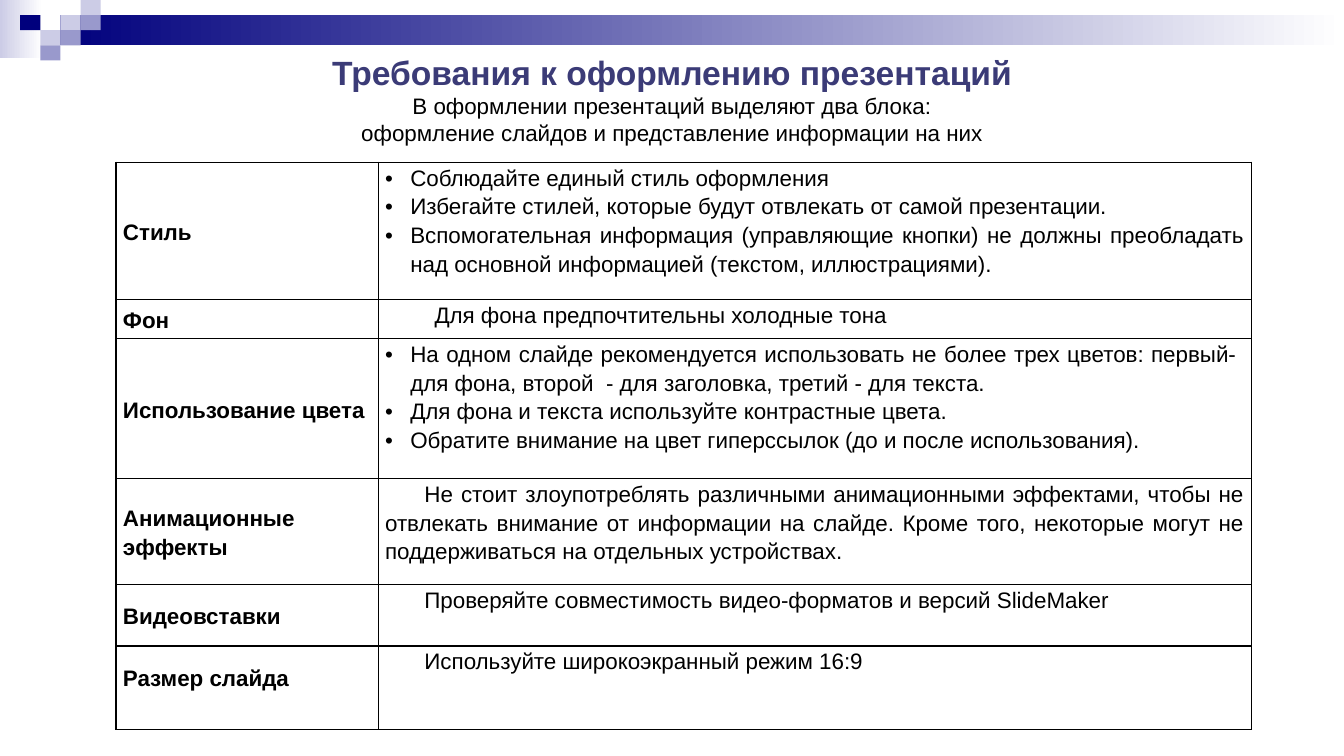
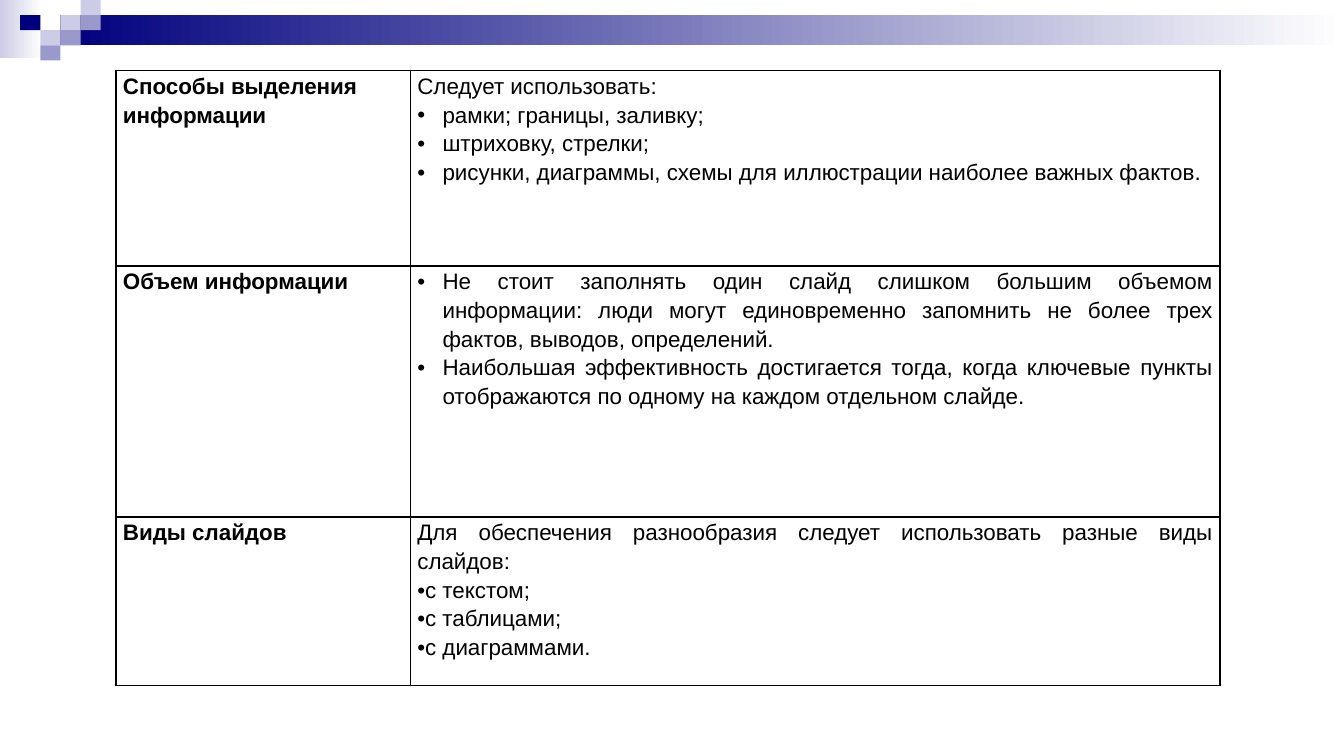
from lxml.etree import SubElement
from pptx import Presentation
from pptx.dml.color import RGBColor
from pptx.enum.shapes import MSO_SHAPE as Shape
from pptx.enum.text import MSO_ANCHOR as Anchor, MSO_AUTO_SIZE as AutoSize, PP_ALIGN as Align
from pptx.oxml.ns import qn
from pptx.util import Emu, Pt

COLORS = {
    "text": "000000",
    "title": "3B3B77",
    "navy": "00007D",
    "violet": "9999CC",
    "pale": "CCCCE6",
    "white": "FFFFFF",
}
FONT = "Arial"
TITLE_ONLY, BLANK = 5, 6
TABLE_LEFT = 115
TILE_WIDTH, TILE_HEIGHT = 20, 15
TILES = [
    (3, 1, "pale"), (4, 0, "pale"), (4, 1, "violet"), (2, 2, "pale"),
    (1, 1, "navy"), (3, 2, "violet"), (2, 3, "violet"),
]

PLAIN = dict(align=Align.JUSTIFY, spacing=1.15)
ITEM = dict(PLAIN, left=25, first=-25, bullet=True)
LEAD = dict(ITEM, bullet=False)
TIGHT = dict(PLAIN, bullet=True)
INSET = dict(PLAIN, left=49)
INDENTED = dict(PLAIN, first=39)
LABEL = dict(bold=True, spacing=1.15)
SPACED_LABEL = dict(LABEL, before=12, after=10)

DESIGN_ROWS = [
    (136, "Стиль", [
        ("Соблюдайте единый стиль оформления", ITEM),
        ("Избегайте стилей, которые будут отвлекать от самой презентации.", ITEM),
        ("Вспомогательная информация (управляющие кнопки) не должны преобладать "
         "над основной информацией (текстом, иллюстрациями).", ITEM),
    ]),
    (39, "Фон", [("Для фона предпочтительны холодные тона", INSET)]),
    (139, "Использование цвета", [
        ("На одном слайде рекомендуется использовать не более трех цветов: первый-  "
         "для фона, второй  - для заголовка, третий - для текста.", ITEM),
        ("Для фона и текста используйте контрастные цвета.", ITEM),
        ("Обратите внимание на цвет гиперссылок (до и после использования).", ITEM),
    ]),
    (105, "Анимационные эффекты", [
        ("Не стоит злоупотреблять различными анимационными эффектами, чтобы не "
         "отвлекать внимание от информации на слайде. Кроме того, некоторые могут не "
         "поддерживаться на отдельных устройствах.", INDENTED),
    ]),
    (61, "Видеовставки", [
        ("Проверяйте совместимость видео-форматов и версий SlideMaker", INDENTED),
    ]),
    (83, "Размер слайда", [("Используйте широкоэкранный режим 16:9", INDENTED)]),
]
CONTENT_ROWS = [
    (194, "Способы выделения информации", [
        ("Следует использовать:", LEAD),
        ("рамки; границы, заливку;", ITEM),
        ("штриховку, стрелки;", ITEM),
        ("рисунки, диаграммы, схемы для иллюстрации наиболее важных фактов.", ITEM),
    ]),
    (249, "Объем информации", [
        ("Не стоит заполнять один слайд слишком большим объемом информации: люди могут "
         "единовременно запомнить не более трех фактов, выводов, определений.", ITEM),
        ("Наибольшая эффективность достигается тогда, когда ключевые пункты "
         "отображаются по одному на каждом отдельном слайде.", ITEM),
    ]),
    (167, "Виды слайдов", [
        ("Для обеспечения разнообразия следует использовать разные виды слайдов:", PLAIN),
        ("с текстом;", TIGHT),
        ("с таблицами;", TIGHT),
        ("с диаграммами.", TIGHT),
    ]),
]


def px(length):
    """Turn px into EMU, at 100 px to the inch."""
    return Emu(length * 9144)


def rgb(name):
    """Return a named colour of the palette."""
    return RGBColor.from_string(COLORS[name])


def write(para, text, size=16, bold=False, color="text", align=Align.LEFT,
          spacing=1.0, before=0, after=0, left=0, first=0, bullet=False):
    """Add a formatted span of text to a paragraph and format the paragraph."""
    para.alignment = align
    para.line_spacing = spacing
    para.space_before, para.space_after = Pt(before), Pt(after)
    span = para.add_run()
    span.text = text
    font = span.font
    font.name, font.size, font.bold = FONT, Pt(size), bold
    font.color.rgb = rgb(color)
    properties = para._p.get_or_add_pPr()
    properties.set("marL", str(px(left)))
    properties.set("indent", str(px(first)))
    if bullet:
        SubElement(properties, qn("a:buFont"), typeface=FONT)
        SubElement(properties, qn("a:buChar"), char="•")


class Slides:
    """Hold the shared style and the current slide."""

    def __init__(self):
        """Start a widescreen deck."""
        self.deck = Presentation()
        self.deck.slide_width, self.deck.slide_height = px(1333), px(750)
        self.page = None

    def add_page(self, layout):
        """Add a slide and make it current."""
        self.page = self.deck.slides.add_slide(self.deck.slide_layouts[layout])

    def bar(self, group, left, top, width, height, *colors):
        """Draw a rectangle in one colour or in a gradient of two."""
        box = group.shapes.add_shape(Shape.RECTANGLE, px(left), px(top), px(width), px(height))
        box.shadow.inherit = False
        box.line.fill.background()
        if len(colors) == 1:
            box.fill.solid()
            box.fill.fore_color.rgb = rgb(colors[0])
            return
        box.fill.gradient()
        box.fill.gradient_angle = 0
        for stop, color in zip(box.fill.gradient_stops, colors):
            stop.color.rgb = rgb(color)

    def master_band(self):
        """Draw the band with its tiles and move it to the slide master."""
        group = self.page.shapes.add_group_shape()
        self.bar(group, 0, 0, 42, 58, "pale", "white")
        self.bar(group, 60, 15, 1273, 30, "navy", "white")
        for column, row, color in TILES:
            self.bar(group, column * TILE_WIDTH, row * TILE_HEIGHT,
                     TILE_WIDTH, TILE_HEIGHT, color)
        for number, item in enumerate(group.element.iter(qn("p:cNvPr")), 100):
            item.set("id", str(number))
        self.deck.slide_master.shapes.element.insert(2, group.element)

    def title(self, heading, *lines):
        """Fill the title placeholder with a heading and smaller lines."""
        box = self.page.shapes.title
        box.left, box.top, box.width, box.height = px(214), px(36), px(905), px(125)
        frame = box.text_frame
        frame.word_wrap, frame.auto_size = True, AutoSize.NONE
        frame.vertical_anchor = Anchor.MIDDLE
        para = frame.paragraphs[0]
        write(para, heading, size=24, bold=True, color="title", align=Align.CENTER)
        for line in lines:
            para.add_line_break()
            write(para, line, align=Align.CENTER)

    def cell(self, cell, paragraphs, anchor=Anchor.TOP, bottom=0):
        """Fill a table cell with paragraphs and give it thin borders."""
        cell.margin_left = cell.margin_right = px(7)
        cell.margin_top, cell.margin_bottom = 0, px(bottom)
        cell.vertical_anchor = anchor
        frame = cell.text_frame
        for index, (text, style) in enumerate(paragraphs):
            write(frame.add_paragraph() if index else frame.paragraphs[0], text, **style)
        properties = cell._tc.get_or_add_tcPr()
        for side in ("lnL", "lnR", "lnT", "lnB"):
            line = SubElement(properties, qn(f"a:{side}"), w=str(Pt(1)))
            fill = SubElement(line, qn("a:solidFill"))
            SubElement(fill, qn("a:srgbClr"), val=COLORS["text"])
        cell.fill.background()

    def table(self, top, widths, rows, label=LABEL, anchor=Anchor.TOP, last_bottom=0):
        """Add a table of bold labels and their advice."""
        heights = [row[0] for row in rows]
        table = self.page.shapes.add_table(
            len(rows), len(widths), px(TABLE_LEFT), px(top),
            px(sum(widths)), px(sum(heights))).table
        table.first_row = table.horz_banding = False
        for column, width in zip(table.columns, widths):
            column.width = px(width)
        for index, (height, name, advice) in enumerate(rows):
            table.rows[index].height = px(height)
            bottom = last_bottom if index == len(rows) - 1 else 0
            self.cell(table.cell(index, 0), [(name, label)], anchor, bottom)
            self.cell(table.cell(index, 1), advice)


def main():
    """Build and save the deck."""
    slides = Slides()
    slides.add_page(TITLE_ONLY)
    slides.master_band()
    slides.title("Требования к оформлению презентаций",
                 "В оформлении презентаций выделяют два блока:",
                 "оформление слайдов и представление информации на них")
    slides.table(161, (260, 866), DESIGN_ROWS, anchor=Anchor.MIDDLE, last_bottom=22)

    slides.add_page(BLANK)
    slides.table(70, (292, 803), CONTENT_ROWS, label=SPACED_LABEL)
    slides.deck.save("out.pptx")


if __name__ == "__main__":
    main()
